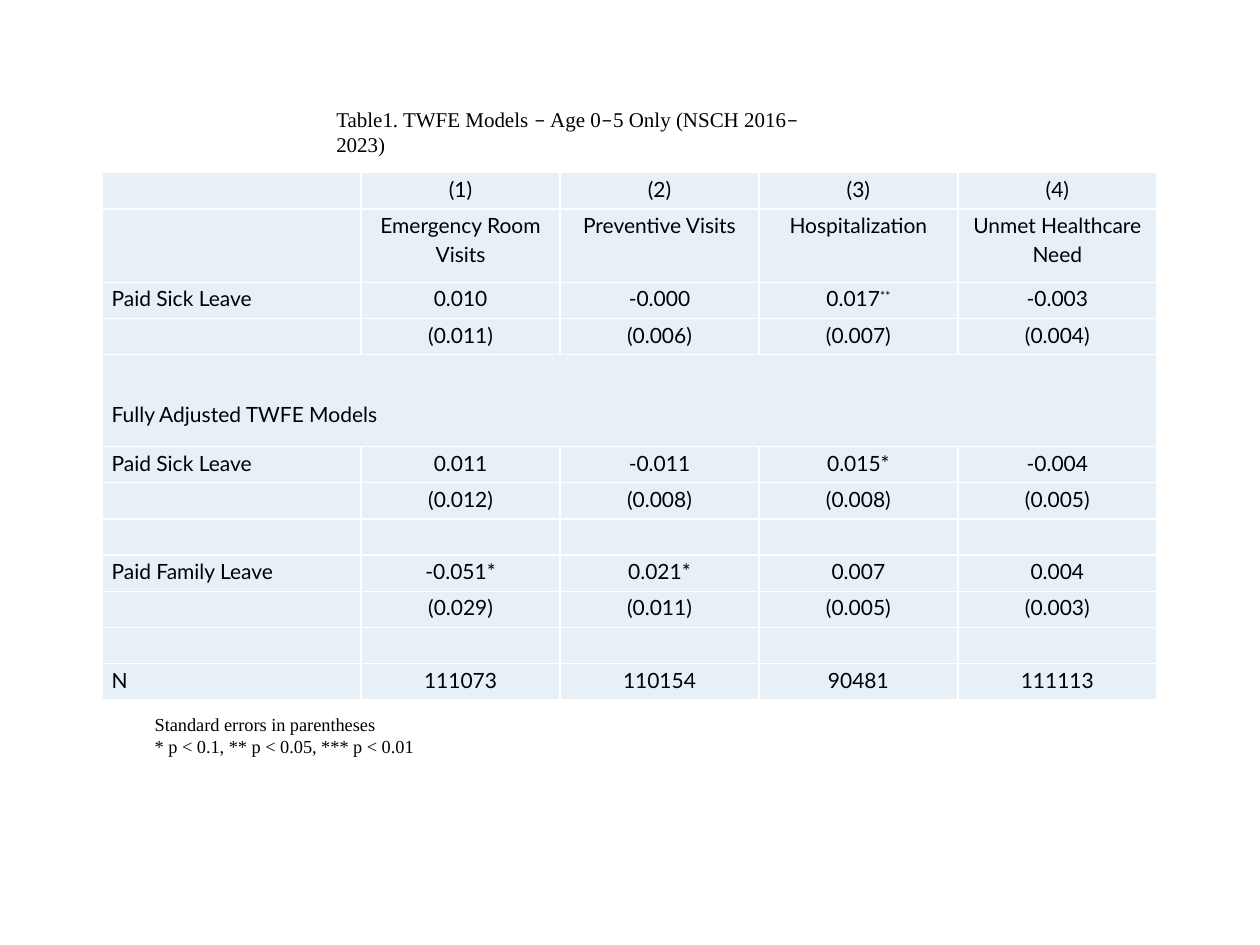
from typing import NamedTuple

from lxml import etree
from pptx import Presentation
from pptx.dml.color import RGBColor
from pptx.enum.text import MSO_ANCHOR, PP_ALIGN
from pptx.oxml.ns import qn
from pptx.util import Cm, Pt

LEFT, CENTER = PP_ALIGN.LEFT, PP_ALIGN.CENTER
TOP = MSO_ANCHOR.TOP
BLACK = RGBColor(0x00, 0x00, 0x00)
WHITE = RGBColor(0xFF, 0xFF, 0xFF)
PALE_BLUE = RGBColor(0xE7, 0xF0, 0xF7)
SANS, SERIF = "Lato", "Times New Roman"

ROW_HEIGHT = 0.73
LABEL_WIDTH, MODEL_WIDTH = 5.21, 4.01
SECTION_GAP = 0.87
SUPERSCRIPT = "^"


class Row(NamedTuple):
    label: str = ""
    values: tuple[str, ...] = ("",) * 4
    height: float = ROW_HEIGHT
    is_section: bool = False


ROWS = [
    Row(values=("(1)", "(2)", "(3)", "(4)")),
    Row(values=("Emergency Room Visits", "Preventive Visits",
                "Hospitalization", "Unmet Healthcare Need"), height=1.48),
    Row("Paid Sick Leave", ("0.010", "-0.000", "0.017^**", "-0.003")),
    Row(values=("(0.011)", "(0.006)", "(0.007)", "(0.004)")),
    Row("Fully Adjusted TWFE Models", height=1.85, is_section=True),
    Row("Paid Sick Leave", ("0.011", "-0.011", "0.015*", "-0.004")),
    Row(values=("(0.012)", "(0.008)", "(0.008)", "(0.005)")),
    Row(),
    Row("Paid Family Leave", ("-0.051*", "0.021*", "0.007", "0.004")),
    Row(values=("(0.029)", "(0.011)", "(0.005)", "(0.003)")),
    Row(),
    Row("N", ("111073", "110154", "90481", "111113")),
]
TITLE = "Table1. TWFE Models – Age 0–5 Only (NSCH 2016–2023)"
NOTES = ["Standard errors in parentheses", "* p < 0.1, ** p < 0.05, *** p < 0.01"]


def set_font(font, name: str, size: float) -> None:
    font.name, font.size = name, Pt(size)
    font.color.rgb = BLACK


def add_borders(cell) -> None:
    tc_pr = cell._tc.get_or_add_tcPr()
    for side in ("lnL", "lnR", "lnT", "lnB"):
        line = etree.SubElement(tc_pr, qn(f"a:{side}"), w=str(Pt(1)))
        fill = etree.SubElement(line, qn("a:solidFill"))
        etree.SubElement(fill, qn("a:srgbClr"), val=str(WHITE))


def fill_cell(cell, text: str, align: PP_ALIGN) -> None:
    """Style a cell and write its text; what follows ^ is raised."""
    add_borders(cell)
    cell.fill.solid()
    cell.fill.fore_color.rgb = PALE_BLUE
    cell.margin_left = cell.margin_right = Cm(0.18)
    cell.margin_top = cell.margin_bottom = 0
    p = cell.text_frame.paragraphs[0]
    p.alignment, p.line_spacing, p.space_after = align, 1.15, Pt(8)
    set_font(p.font, SANS, 12)
    base, _, raised = text.partition(SUPERSCRIPT)
    if base:
        p.add_run().text = base
    if raised:
        r = p.add_run()
        r.text = raised
        r._r.get_or_add_rPr().set("baseline", "30000")


def add_results_table(slide) -> None:
    n_cols = 1 + len(ROWS[0].values)
    width = LABEL_WIDTH + (n_cols - 1) * MODEL_WIDTH
    height = sum(row.height for row in ROWS)
    table = slide.shapes.add_table(len(ROWS), n_cols, Cm(2.07), Cm(3.48),
                                   Cm(width), Cm(height)).table
    table.first_row = table.horz_banding = False
    for i, column in enumerate(table.columns):
        column.width = Cm(MODEL_WIDTH if i else LABEL_WIDTH)
    for i, row in enumerate(ROWS):
        table.rows[i].height = Cm(row.height)
        for j, text in enumerate((row.label, *row.values)):
            fill_cell(table.cell(i, j), text, CENTER if j else LEFT)
        if row.is_section:
            table.cell(i, 0).merge(table.cell(i, n_cols - 1))
            table.cell(i, 0).margin_top = Cm(SECTION_GAP)


def add_text_frame(slide, left: float, top: float, width: float, height: float):
    sp = slide.shapes.add_textbox(Cm(left), Cm(top), Cm(width), Cm(height))
    tf = sp.text_frame
    tf.word_wrap, tf.vertical_anchor = True, TOP
    return tf


def add_title(slide) -> None:
    """Write the title in serif with its dashes in sans."""
    tf = add_text_frame(slide, 6.53, 2.15, 10.67, 1.55)
    tf.margin_top = 0
    p = tf.paragraphs[0]
    for i, part in enumerate(TITLE.split("–")):
        pieces = [("–", SANS)] if i else []
        for text, name in pieces + [(part, SERIF)]:
            r = p.add_run()
            r.text = text
            set_font(r.font, name, 12)


def add_notes(slide) -> None:
    tf = add_text_frame(slide, 2.87, 14.25, 17.96, 1.19)
    for i, note in enumerate(NOTES):
        p = tf.add_paragraph() if i else tf.paragraphs[0]
        p.text = note
        set_font(p.font, SERIF, 10.5)


def main() -> None:
    prs = Presentation()
    prs.slide_width, prs.slide_height = Cm(25.4), Cm(19.05)
    slide = prs.slides.add_slide(prs.slide_layouts[6])
    add_results_table(slide)
    add_title(slide)
    add_notes(slide)
    prs.save("out.pptx")


if __name__ == "__main__":
    main()
